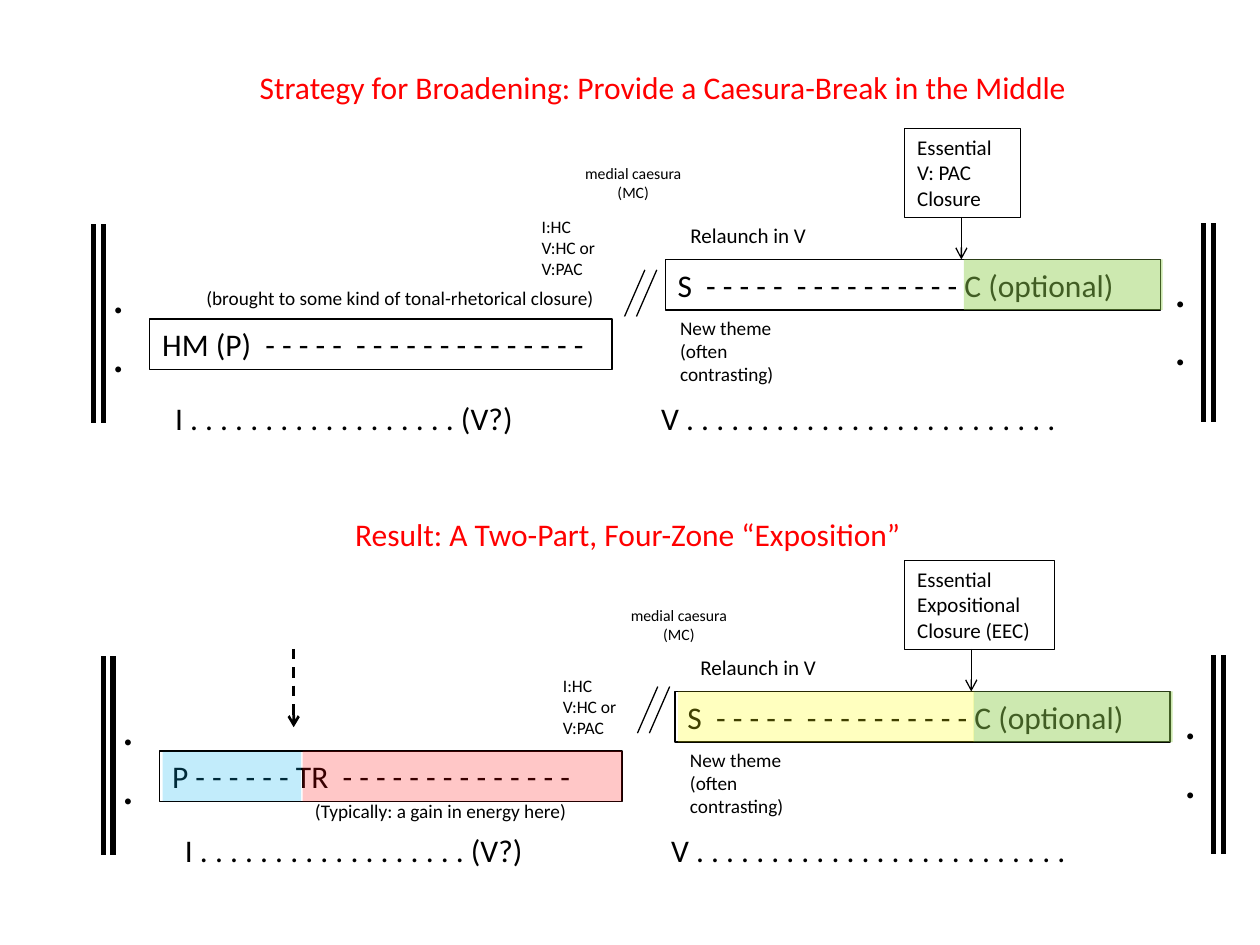
"""Build the slide on caesura breaks and the two-part exposition."""
from dataclasses import dataclass, replace

from lxml.etree import SubElement
from pptx import Presentation
from pptx.dml.color import RGBColor
from pptx.enum.dml import MSO_LINE
from pptx.enum.shapes import MSO_CONNECTOR, MSO_SHAPE
from pptx.enum.text import MSO_ANCHOR, MSO_AUTO_SIZE, PP_ALIGN
from pptx.oxml.ns import qn
from pptx.slide import Slide
from pptx.text.text import TextFrame
from pptx.util import Cm, Pt


@dataclass(frozen=True)
class Theme:
    """Colours, font, type sizes and line widths."""
    font: str = "Calibri"
    ink: str = "000000"
    heading: str = "FF0000"
    primary: str = "00B0F0"
    transition: str = "FF0000"
    secondary: str = "FFFF00"
    closing: str = "92D050"
    main: int = 18
    dots: int = 28
    note: int = 12
    small: int = 11
    cadence: int = 10
    caesura: int = 9
    thin: float = 0.75
    medium: float = 1.5
    thick: float = 3


@dataclass(frozen=True)
class Label:
    """A text with its place in centimetres and its style."""
    text: str
    left: float
    top: float
    width: float
    height: float
    size: int
    color: str = "000000"
    align: PP_ALIGN = PP_ALIGN.LEFT
    framed: bool = False
    tab: float = 0

    def shifted(self, dx: float, dy: float) -> "Label":
        """Return the same label moved by an offset."""
        return replace(self, left=self.left + dx, top=self.top + dy)


@dataclass(frozen=True)
class Zone:
    """A translucent band over part of a theme box."""
    left: float
    top: float
    width: float
    height: float
    color: str
    opacity: int


@dataclass(frozen=True)
class Diagram:
    """The parts that differ between the two diagrams."""
    dx: float
    dy: float
    first_theme: str
    closure: str
    closure_width: float
    cadence_at: tuple[float, float]
    caesura_at: tuple[float, float]
    slash_at: tuple[float, float]


THEME = Theme()
ROW = 1.02
HARMONY = ("I . . . . . . . . . . . . . . . . . . (V?)\t"
           "V . . . . . . . . . . . . . . . . . . . . . . . . .")
TITLE = Label("Strategy for Broadening: Provide a Caesura-Break in the Middle",
              4.98, 1.24, 17.78, ROW, THEME.main, THEME.heading)
SHARED = (
    Label("S  - - - - -  - - - - - - - - - - C (optional)",
          13.41, 5.23, 9.98, ROW, THEME.main, framed=True),
    Label("Relaunch in V", 13.67, 4.37, 2.97, 0.76, THEME.note),
    Label("New theme\n(often contrasting)", 13.46, 6.25, 2.77, 1.68, THEME.small),
    Label(HARMONY, 3.28, 7.92, 20.22, ROW, THEME.main, tab=9.8),
    Label(".\n.", 2.01, 5.21, 1.07, 2.64, THEME.dots),
    Label(".\n.", 23.42, 5.08, 1.07, 2.64, THEME.dots),
)
DIAGRAMS = (
    Diagram(0, 0, "HM (P)  - - - - -  - - - - - - - - - - - - - -",
            "Essential\nV: PAC Closure", 2.34, (10.67, 4.22), (11.48, 3.18), (13.0, 5.44)),
    Diagram(0.2, 8.71, "P - - - - - - TR  - - - - - - - - - - - - - -",
            "Essential\nExpositional Closure (EEC)", 3.02, (11.1, 13.49), (12.4, 12.09), (13.26, 13.84)),
)
ZONES = (
    Zone(3.28, 15.16, 2.79, 0.99, THEME.primary, 24),
    Zone(6.1, 15.14, 6.45, ROW, THEME.transition, 22),
    Zone(13.67, 13.94, 5.97, ROW, THEME.secondary, 25),
)
REMARKS = (
    Label("Result: A Two-Part, Four-Zone “Exposition”", 6.91, 10.26, 11.71, ROW,
          THEME.main, THEME.heading),
    Label("(Typically: a gain in energy here)", 6.1, 15.98, 5.69, 0.74, THEME.small),
    Label("(brought to some kind of tonal-rhetorical closure)", 3.91, 5.64, 8.43, 0.74, THEME.small),
)


def write(frame: TextFrame, label: Label) -> None:
    """Fill a text frame and format its paragraphs."""
    frame.text = label.text
    frame.word_wrap = True
    frame.auto_size = MSO_AUTO_SIZE.SHAPE_TO_FIT_TEXT
    frame.vertical_anchor = MSO_ANCHOR.TOP
    for paragraph in frame.paragraphs:
        paragraph.alignment = label.align
        if label.tab:
            stops = SubElement(paragraph._p.get_or_add_pPr(), qn("a:tabLst"))
            SubElement(stops, qn("a:tab"), pos=str(Cm(label.tab)), algn="l")
        for run in paragraph.runs:
            run.font.name = THEME.font
            run.font.size = Pt(label.size)
            run.font.color.rgb = RGBColor.from_string(label.color)


def draw_label(slide: Slide, label: Label) -> None:
    """Draw a text box, or an outlined rectangle when framed."""
    place = [Cm(n) for n in (label.left, label.top, label.width, label.height)]
    if label.framed:
        holder = slide.shapes.add_shape(MSO_SHAPE.RECTANGLE, *place)
        holder.shadow.inherit = False
        holder.fill.background()
        holder.line.color.rgb = RGBColor.from_string(THEME.ink)
        holder.line.width = Pt(THEME.thin)
    else:
        holder = slide.shapes.add_textbox(*place)
    write(holder.text_frame, label)


def draw_zone(slide: Slide, zone: Zone) -> None:
    """Draw a translucent band without outline."""
    place = [Cm(n) for n in (zone.left, zone.top, zone.width, zone.height)]
    band = slide.shapes.add_shape(MSO_SHAPE.RECTANGLE, *place)
    band.shadow.inherit = False
    band.line.fill.background()
    band.fill.solid()
    band.fill.fore_color.rgb = RGBColor.from_string(zone.color)
    tint = next(band._element.spPr.iter(qn("a:srgbClr")))
    SubElement(tint, qn("a:alpha"), val=str(zone.opacity * 1000))


def draw_line(slide: Slide, x1: float, y1: float, x2: float, y2: float,
              width: float = THEME.thin, arrow: bool = False, dashed: bool = False) -> None:
    """Draw a straight line, with an open arrowhead if wanted."""
    stroke = slide.shapes.add_connector(MSO_CONNECTOR.STRAIGHT, Cm(x1), Cm(y1), Cm(x2), Cm(y2))
    stroke.line.color.rgb = RGBColor.from_string(THEME.ink)
    stroke.line.width = Pt(width)
    if dashed:
        stroke.line.dash_style = MSO_LINE.DASH
    if arrow:
        SubElement(stroke.line._get_or_add_ln(), qn("a:tailEnd"), type="arrow")
    SubElement(stroke._element.spPr, qn("a:effectLst"))


def draw_diagram(slide: Slide, diagram: Diagram) -> None:
    """Draw one exposition diagram between its repeat bars."""
    dx, dy = diagram.dx, diagram.dy
    first = Label(diagram.first_theme, 3.02, 6.43, 9.32, ROW, THEME.main, framed=True)
    for label in (first, *SHARED):
        draw_label(slide, label.shifted(dx, dy))
    draw_label(slide, Label(diagram.closure, 18.24, 2.59 + dy, diagram.closure_width, 1.8,
                            THEME.note, framed=True))
    draw_label(slide, Label("I:HC\nV:HC or\nV:PAC", *diagram.cadence_at, 1.88, 1.55, THEME.cadence))
    draw_label(slide, Label("medial caesura\n(MC)", *diagram.caesura_at, 2.57, ROW,
                            THEME.caesura, align=PP_ALIGN.CENTER))
    draw_line(slide, 19.38 + dx, 4.37 + dy, 19.38 + dx, 5.23 + dy, arrow=True)
    slash_x, slash_y = diagram.slash_at
    for gap in (0, 0.24):
        draw_line(slide, slash_x + gap, slash_y, slash_x + gap - 0.41, slash_y + 0.94)
    for bar_x, bar_y in ((1.88, 4.52), (24.26, 4.5)):
        for gap in (0, 0.2):
            x = bar_x + dx + gap
            draw_line(slide, x, bar_y + dy, x, bar_y + dy + 4.01, THEME.thick)
    draw_zone(slide, Zone(19.43 + dx, 5.23 + dy, 4.01, ROW, THEME.closing, 45))


def main() -> None:
    """Create and save the presentation."""
    deck = Presentation()
    deck.slide_width, deck.slide_height = Cm(25.4), Cm(19.05)
    slide = deck.slides.add_slide(deck.slide_layouts[5])
    title = slide.shapes.title
    title.left, title.top = Cm(TITLE.left), Cm(TITLE.top)
    title.width, title.height = Cm(TITLE.width), Cm(TITLE.height)
    write(title.text_frame, TITLE)
    for diagram in DIAGRAMS:
        draw_diagram(slide, diagram)
    draw_line(slide, 5.92, 13.08, 5.92, 14.66, THEME.medium, arrow=True, dashed=True)
    for zone in ZONES:
        draw_zone(slide, zone)
    for remark in REMARKS:
        draw_label(slide, remark)
    deck.save("out.pptx")


if __name__ == "__main__":
    main()
